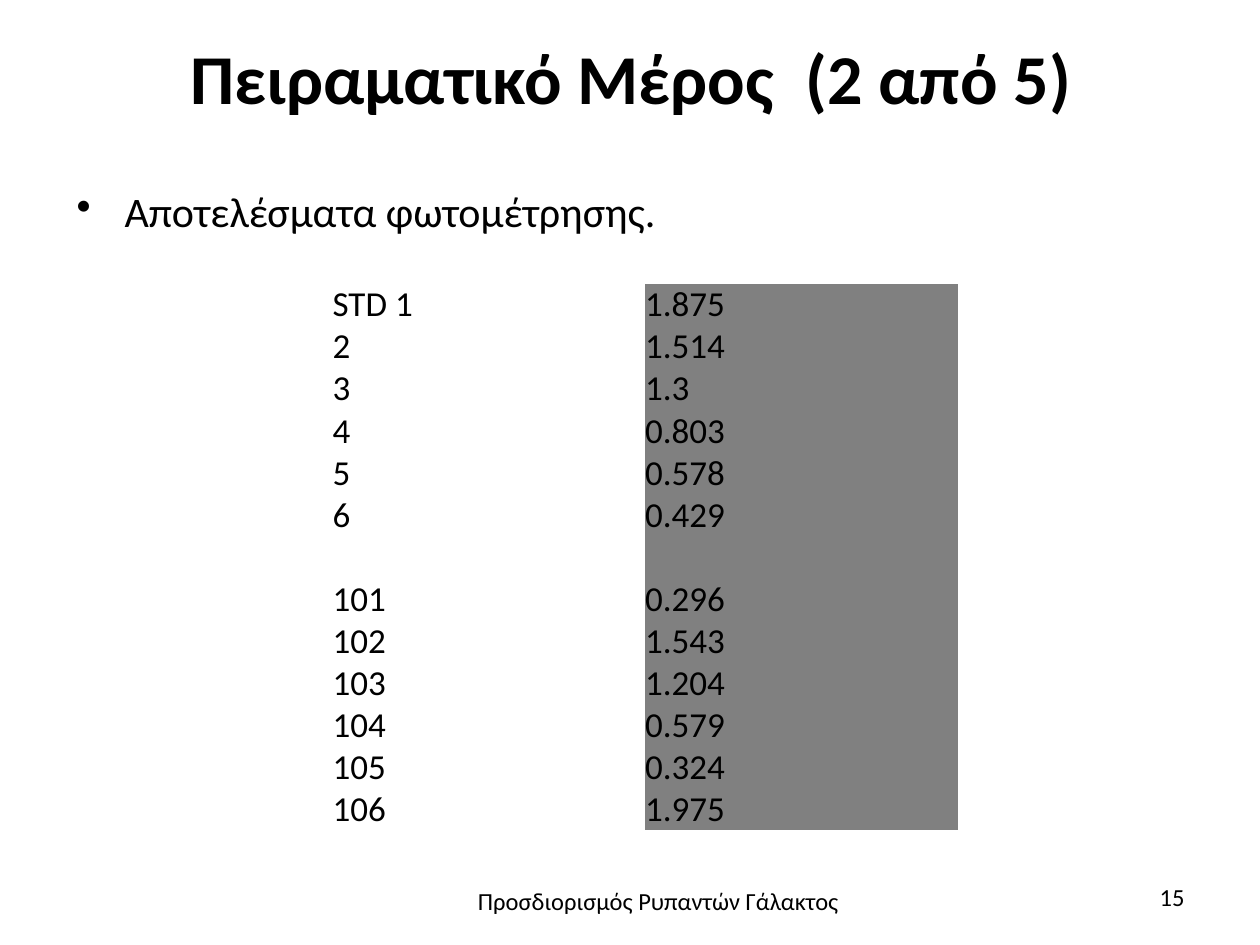
from lxml import etree
from pptx import Presentation
from pptx.dml.color import RGBColor
from pptx.enum.text import MSO_ANCHOR, PP_ALIGN
from pptx.oxml.ns import qn
from pptx.util import Inches, Pt

BLACK = RGBColor(0x00, 0x00, 0x00)
GRAY = RGBColor(0x80, 0x80, 0x80)
FONT = "Calibri"
NO_STYLE_NO_GRID = "{2D5ABB26-0587-4C30-8999-92F81FD0307C}"

READINGS = [
    ("STD 1", "1.875"), ("2", "1.514"), ("3", "1.3"),
    ("4", "0.803"), ("5", "0.578"), ("6", "0.429"),
    ("", ""),
    ("101", "0.296"), ("102", "1.543"), ("103", "1.204"),
    ("104", "0.579"), ("105", "0.324"), ("106", "1.975"),
]


def write(tf, text, size, align=PP_ALIGN.LEFT, bold=False):
    """Fill the frame's first paragraph and return it."""
    p = tf.paragraphs[0]
    p.text = text
    p.alignment = align
    p.font.name = FONT
    p.font.size = Pt(size)
    p.font.bold = bold
    p.font.color.rgb = BLACK
    return p


def add_text(left, top, width, height, text, size, align=PP_ALIGN.LEFT):
    box = s.shapes.add_textbox(Inches(left), Inches(top), Inches(width), Inches(height))
    box.text_frame.word_wrap = True
    return write(box.text_frame, text, size, align)


prs = Presentation()
prs.slide_width, prs.slide_height = Inches(10), Inches(7.5)
s = prs.slides.add_slide(prs.slide_layouts[5])

# Title
title = s.shapes.title
title.left, title.top = Inches(0.51), Inches(0.09)
title.width, title.height = Inches(8.99), Inches(1.06)
tf = title.text_frame
tf.margin_left = tf.margin_right = tf.margin_bottom = 0
tf.margin_top = Inches(0.02)
tf.vertical_anchor = MSO_ANCHOR.MIDDLE
p = write(tf, "Πειραματικό Μέρος  (2 από 5)", 40, PP_ALIGN.CENTER, bold=True)
p.line_spacing = 0.98

# Bullet line
p = add_text(0.51, 1.47, 8.99, 0.46, "Αποτελέσματα φωτομέτρησης.", 24)
p.line_spacing = 0.9
p.space_before = Pt(4.8)
pPr = p._p.get_or_add_pPr()
pPr.set("marL", str(Inches(0.38)))
pPr.set("indent", str(-Inches(0.38)))
bullet = etree.Element(qn("a:buChar"), char="•")
pPr.find(qn("a:defRPr")).addprevious(bullet)

# Photometry readings
frame = s.shapes.add_table(len(READINGS), 2, Inches(2.64), Inches(2.25),
                           Inches(4.96), Inches(4.33))
table = frame.table
table.first_row = table.horz_banding = False
table._tbl.tblPr.find(qn("a:tableStyleId")).text = NO_STYLE_NO_GRID
for i, reading in enumerate(READINGS):
    for j, text in enumerate(reading):
        cell = table.cell(i, j)
        cell.margin_left = cell.margin_right = cell.margin_top = cell.margin_bottom = 0
        cell.vertical_anchor = MSO_ANCHOR.BOTTOM
        write(cell.text_frame, text, 20)
        if j == 1:
            cell.fill.solid()
            cell.fill.fore_color.rgb = GRAY
        else:
            cell.fill.background()

# Footer and slide number
add_text(3.48, 6.98, 3.49, 0.55, "Προσδιορισμός Ρυπαντών Γάλακτος", 14, PP_ALIGN.CENTER)
add_text(7.17, 6.95, 2.33, 0.4, "15", 14, PP_ALIGN.RIGHT)

prs.save("out.pptx")
